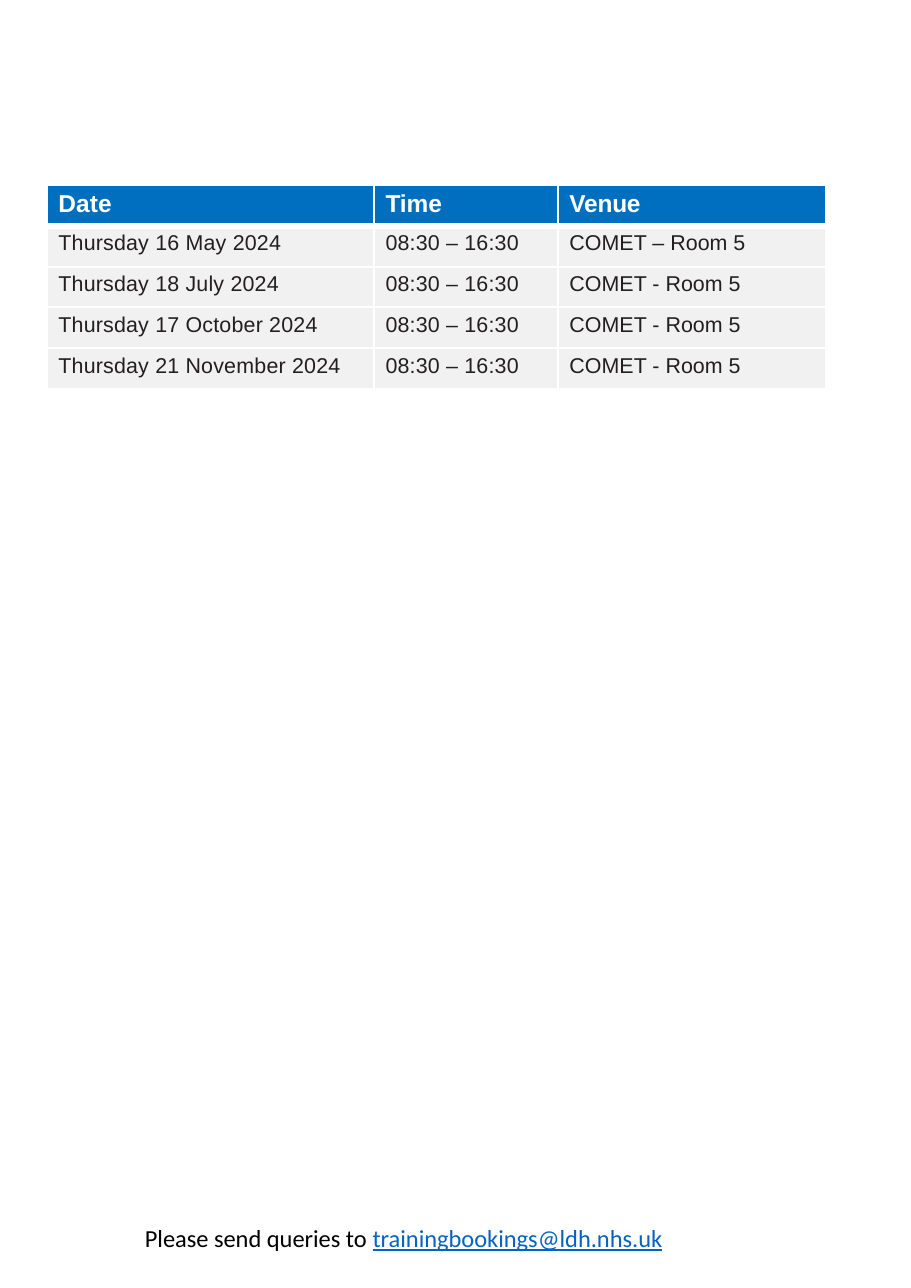
"""Build a portrait page listing training dates, times and venues."""
from dataclasses import dataclass

from lxml.etree import SubElement
from pptx import Presentation
from pptx.dml.color import RGBColor
from pptx.enum.text import MSO_ANCHOR, MSO_AUTO_SIZE, PP_ALIGN
from pptx.oxml.ns import qn
from pptx.slide import Slide
from pptx.table import _Cell
from pptx.text.text import _Paragraph
from pptx.util import Emu, Pt

EMU_PER_PX = 9144


@dataclass(frozen=True)
class Theme:
    """Colours, fonts and type sizes of the page."""

    header_fill: str = "006FC0"
    body_fill: str = "F1F1F2"
    white: str = "FFFFFF"
    body_text: str = "231F20"
    black: str = "000000"
    link: str = "0563C1"
    table_font: str = "Arial"
    footer_font: str = "Calibri"
    large: int = 16
    small: int = 14
    thin_border: float = 1.5
    thick_border: float = 4.5


@dataclass(frozen=True)
class Column:
    """One table column with its heading and letter spacing in points."""

    heading: str
    width: int
    header_spacing: float
    body_spacing: float


@dataclass(frozen=True)
class Session:
    """One training session."""

    date: str
    venue: str
    time: str = "08:30 – 16:30"


@dataclass(frozen=True)
class TextStyle:
    """Look of a run of text."""

    font: str
    size: int
    color: str
    bold: bool = False
    underline: bool = False
    spacing: float = 0


THEME = Theme()
COLUMNS = (
    Column("Date", 297, 0.1, 0.1),
    Column("Time", 167, 0, 0.1),
    Column("Venue", 243, -0.1, 0),
)
SESSIONS = (
    Session("Thursday 16 May 2024", "COMET – Room 5"),
    Session("Thursday 18 July 2024", "COMET - Room 5"),
    Session("Thursday 17 October 2024", "COMET - Room 5"),
    Session("Thursday 21 November 2024", "COMET - Room 5"),
)
TABLE_LEFT, TABLE_TOP, ROW_HEIGHT = 43, 168, 37
CELL_FORMAT = {
    "margin_left": Emu(10 * EMU_PER_PX),
    "margin_top": Emu(5 * EMU_PER_PX),
    "margin_right": 0,
    "margin_bottom": 0,
    "vertical_anchor": MSO_ANCHOR.TOP,
}


def px(length: int) -> Emu:
    """Turn pixels into EMU."""
    return Emu(length * EMU_PER_PX)


def add_run(paragraph: _Paragraph, text: str, style: TextStyle) -> None:
    """Add styled text to a paragraph."""
    run = paragraph.add_run()
    run.text = text
    font_format = {
        "name": style.font,
        "size": Pt(style.size),
        "bold": style.bold,
        "underline": style.underline,
    }
    for name, value in font_format.items():
        setattr(run.font, name, value)
    run.font.color.rgb = RGBColor.from_string(style.color)
    if style.spacing:
        run._r.get_or_add_rPr().set("spc", str(round(style.spacing * 100)))


def add_borders(cell: _Cell, widths: dict[str, float]) -> None:
    """Draw white borders of the given widths in points."""
    properties = cell._tc.get_or_add_tcPr()
    for side, width in widths.items():
        line = SubElement(properties, qn(f"a:ln{side}"), w=str(Pt(width)))
        fill = SubElement(line, qn("a:solidFill"))
        SubElement(fill, qn("a:srgbClr"), val=THEME.white)


def fill_cell(cell: _Cell, text: str, column: Column, row_index: int) -> None:
    """Format one cell of the schedule and write its text."""
    is_header = row_index == 0
    for name, value in CELL_FORMAT.items():
        setattr(cell, name, value)
    thin, thick = THEME.thin_border, THEME.thick_border
    add_borders(cell, {
        "L": thin,
        "R": thin,
        "T": thick if row_index == 1 else thin,
        "B": thick if is_header else thin,
    })
    cell.fill.solid()
    cell.fill.fore_color.rgb = RGBColor.from_string(
        THEME.header_fill if is_header else THEME.body_fill
    )
    style = (
        TextStyle(THEME.table_font, THEME.large, THEME.white, bold=True,
                  spacing=column.header_spacing)
        if is_header
        else TextStyle(THEME.table_font, THEME.small, THEME.body_text,
                       spacing=column.body_spacing)
    )
    add_run(cell.text_frame.paragraphs[0], text, style)


def add_schedule(slide: Slide) -> None:
    """Add the table of sessions."""
    rows = [tuple(column.heading for column in COLUMNS)]
    rows += [(session.date, session.time, session.venue) for session in SESSIONS]
    table = slide.shapes.add_table(
        len(rows), len(COLUMNS), px(TABLE_LEFT), px(TABLE_TOP),
        px(sum(column.width for column in COLUMNS)), px(ROW_HEIGHT * len(rows)),
    ).table
    table.horz_banding = False
    for table_column, column in zip(table.columns, COLUMNS):
        table_column.width = px(column.width)
    for row_index, texts in enumerate(rows):
        table.rows[row_index].height = px(ROW_HEIGHT)
        for column_index, (text, column) in enumerate(zip(texts, COLUMNS)):
            fill_cell(table.cell(row_index, column_index), text, column, row_index)


def add_footer(slide: Slide) -> None:
    """Add the contact line at the foot of the page."""
    frame = slide.shapes.add_textbox(px(15), px(1105), px(703), px(64)).text_frame
    frame_format = {"word_wrap": True, "auto_size": MSO_AUTO_SIZE.SHAPE_TO_FIT_TEXT}
    for name, value in frame_format.items():
        setattr(frame, name, value)
    paragraph = frame.paragraphs[0]
    paragraph.alignment = PP_ALIGN.CENTER
    add_run(paragraph, "Please send queries to ",
            TextStyle(THEME.footer_font, THEME.large, THEME.black))
    add_run(paragraph, "trainingbookings@ldh.nhs.uk",
            TextStyle(THEME.footer_font, THEME.large, THEME.link, underline=True))


def main() -> None:
    """Build and save the presentation."""
    presentation = Presentation()
    presentation.slide_width = px(827)
    presentation.slide_height = px(1169)
    slide = presentation.slides.add_slide(presentation.slide_layouts[6])
    add_schedule(slide)
    add_footer(slide)
    presentation.save("out.pptx")


if __name__ == "__main__":
    main()
